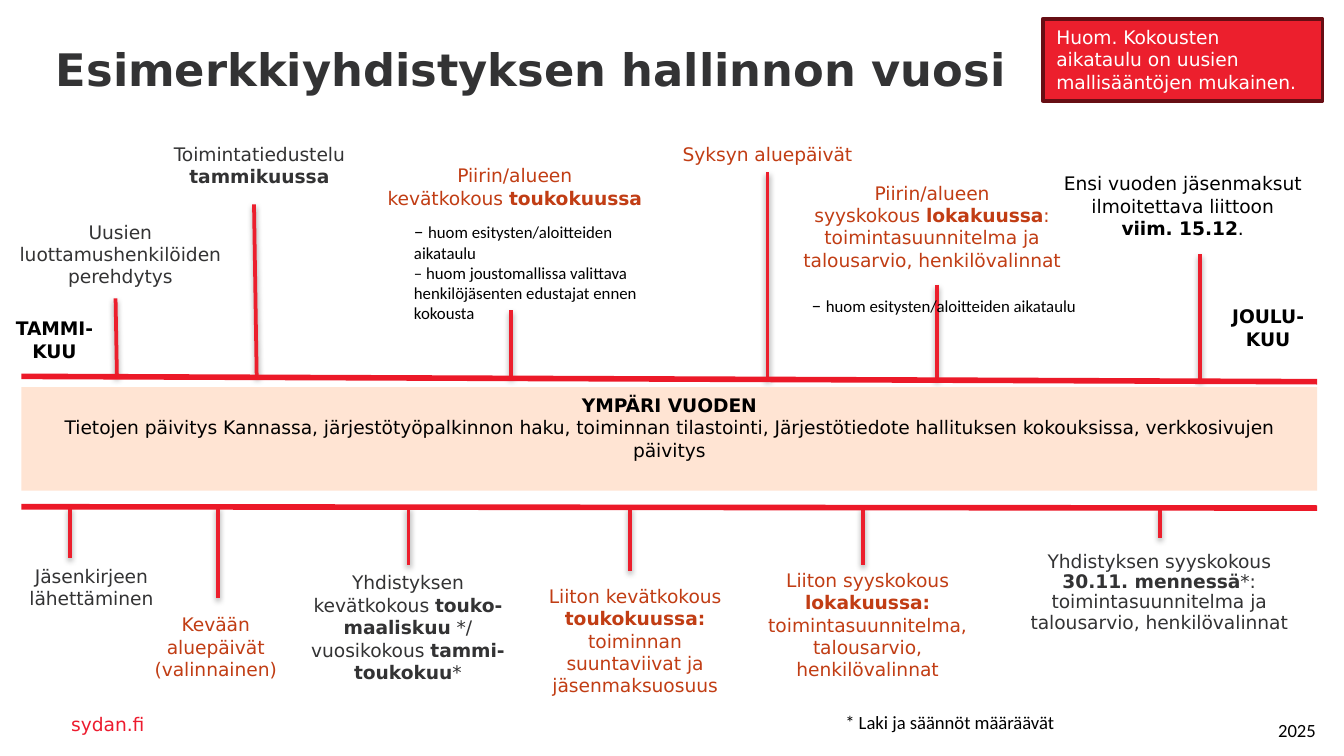
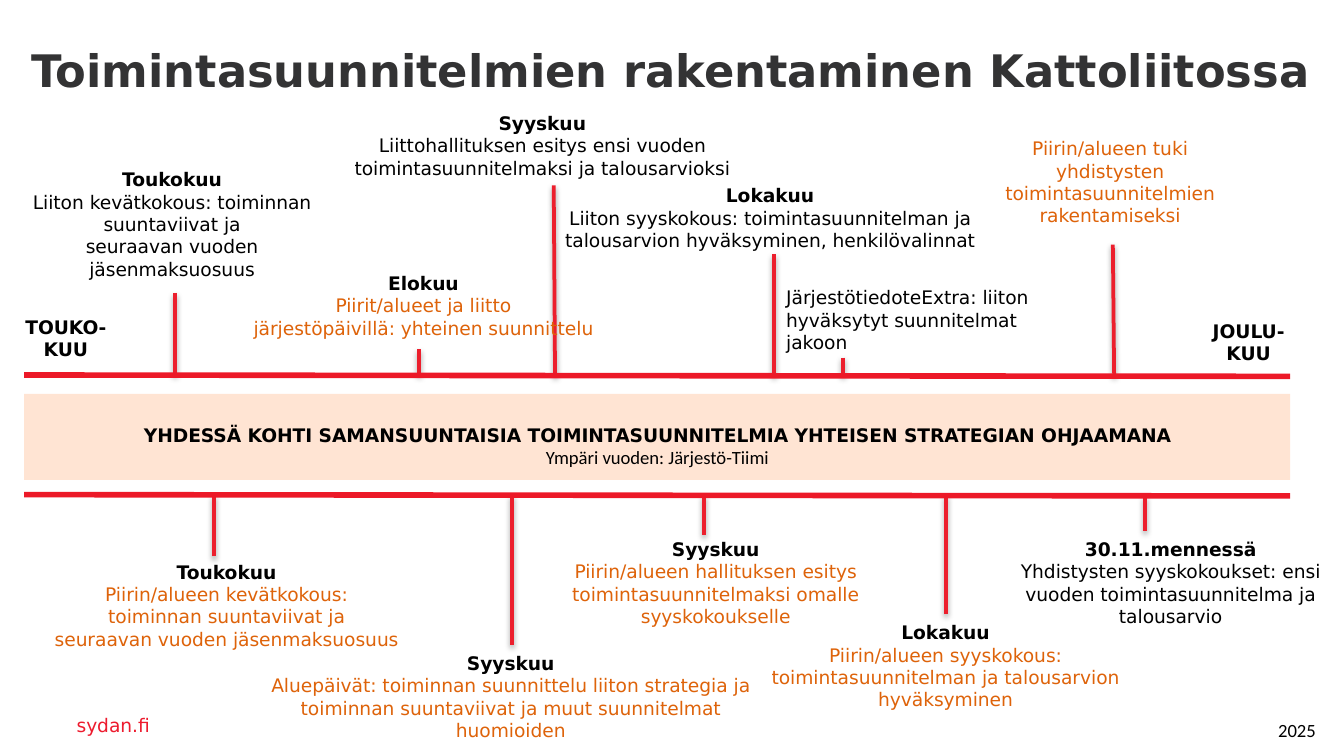
import pptx
import pptx.dml.color
import pptx.enum.shapes
import pptx.enum.text
import pptx.oxml
import pptx.oxml.ns
import pptx.util

ALIGN = pptx.enum.text.PP_ALIGN
ANCHOR = pptx.enum.text.MSO_ANCHOR


class Theme:
    wide, high = 10.01, 5.63
    columns = 100
    sans, plain = "DejaVu Sans", "Calibri"
    dark, black, white = "333334", "000000", "FFFFFF"
    red, axis_red, link_red, border_red = "EC1F2D", "EC1928", "ED1B2E", "670E14"
    rust, orange, peach = "C13D14", "DE630A", "FFE4D3"
    title_size, body_size, dash_size, note_size = 24, 10, 10.5, 9
    axis_width, stem_width = 3, 2

    # style name: font, size, colour, alignment
    styles = {
        "dark": (sans, body_size, dark, ALIGN.CENTER),
        "black": (sans, body_size, black, ALIGN.CENTER),
        "rust": (sans, body_size, rust, ALIGN.CENTER),
        "orange": (sans, body_size, orange, ALIGN.CENTER),
        "alert": (sans, body_size, white, ALIGN.LEFT),
        "link": (sans, body_size, link_red, ALIGN.LEFT),
        "title": (sans, title_size, dark, ALIGN.CENTER),
        "caption": (plain, body_size, black, ALIGN.CENTER),
        "footer": (plain, body_size, black, ALIGN.LEFT),
        "note": (plain, note_size, black, ALIGN.LEFT),
    }
    # what text between ** marks gets; bold unless named here
    emphasis = {"note": {"size": pptx.util.Pt(dash_size)}}

    shadow = (
        '<a:effectLst %s><a:outerShdw blurRad="39370" dist="20320" dir="5400000" rotWithShape="0">'
        '<a:srgbClr val="000000"><a:alpha val="38000"/></a:srgbClr>'
        "</a:outerShdw></a:effectLst>"
    )
    no_shadow = "<a:effectLst %s/>"


def assign(target, values):
    for name, value in values.items():
        setattr(target, name, value)


def rgb(value):
    return pptx.dml.color.RGBColor.from_string(value)


class Deck:
    """Draws on the current slide; every length counts square cells, 100 to the slide's width."""

    def __init__(self, theme):
        self.theme = theme
        self.presentation = pptx.Presentation()
        assign(self.presentation, {
            "slide_width": pptx.util.Inches(theme.wide),
            "slide_height": pptx.util.Inches(theme.high),
        })
        self.slide = None

    def cells(self, *counts):
        cell = self.presentation.slide_width / self.theme.columns
        return [int(count * cell) for count in counts]

    def new_slide(self, title, place, link_column, link_row):
        self.slide = self.presentation.slides.add_slide(self.presentation.slide_layouts[5])
        shape = self.slide.shapes.title
        assign(shape, dict(zip(("left", "top", "width", "height"), self.cells(*place))))
        self.fill_text(shape, "title", [f"**{title}**"], anchor=ANCHOR.MIDDLE, insets=(0.8, 0.4))
        self.text((link_column, link_row, 73.6, 3), "link", ["sydan.fi"], anchor=ANCHOR.MIDDLE)
        self.text((94.1, 53, 5.8, 2.7), "footer", ["2025"])

    def fill_text(self, shape, style, lines, heading=None, anchor=ANCHOR.TOP,
                  insets=(1, 0.5), **paragraph_format):
        """Write the lines below an optional bold black heading; ** marks emphasis."""
        side, top = self.cells(*insets)
        frame = shape.text_frame
        assign(frame, {
            "word_wrap": True, "auto_size": pptx.enum.text.MSO_AUTO_SIZE.NONE,
            "vertical_anchor": anchor, "margin_left": side, "margin_right": side,
            "margin_top": top, "margin_bottom": self.cells(0.4)[0],
        })
        content = [("black", f"**{heading}**")] if heading else []
        content += [(style, line) for line in lines]
        for index, (name, line) in enumerate(content):
            font, size, colour, alignment = self.theme.styles[name]
            paragraph = frame.add_paragraph() if index else frame.paragraphs[0]
            assign(paragraph, {"alignment": alignment, **paragraph_format})
            for part, words in enumerate(line.split("**")):
                if not words:
                    continue
                run = paragraph.add_run()
                run.text = words
                values = {"name": font, "size": pptx.util.Pt(size), "bold": False}
                if part % 2:
                    values.update(self.theme.emphasis.get(name, {"bold": True}))
                assign(run.font, values)
                run.font.color.rgb = rgb(colour)

    def text(self, place, style, lines, **options):
        box = self.slide.shapes.add_textbox(*self.cells(*place))
        self.fill_text(box, style, lines, **options)

    def panel(self, place, fill, style, lines, border=None, **options):
        shape = self.slide.shapes.add_shape(
            pptx.enum.shapes.MSO_SHAPE.RECTANGLE, *self.cells(*place))
        shape.shadow.inherit = False
        shape.fill.solid()
        shape.fill.fore_color.rgb = rgb(fill)
        if border:
            shape.line.color.rgb = rgb(border)
            shape.line.width = pptx.util.Pt(self.theme.stem_width)
        else:
            shape.line.fill.background()
        self.fill_text(shape, style, lines, **options)

    def line(self, ends, colour, width, effect):
        connector = self.slide.shapes.add_connector(
            pptx.enum.shapes.MSO_CONNECTOR.STRAIGHT, *self.cells(*ends))
        connector.line.color.rgb = rgb(colour)
        connector.line.width = pptx.util.Pt(width)
        connector._element.spPr.append(
            pptx.oxml.parse_xml(effect % pptx.oxml.ns.nsdecls("a")))

    def axis(self, columns, rows, stems):
        """Draw an axis and its stems, each a column, an end row and the lean at the axis."""
        theme = self.theme
        (left, right), (first, last) = columns, rows
        for column, end, lean in stems:
            start = first + (last - first) * (column - left) / (right - left)
            self.line((column, end, column + lean, start),
                      theme.red, theme.stem_width, theme.shadow)
        self.line((left, first, right, last), theme.axis_red, theme.axis_width, theme.no_shadow)


def administration_year(deck):
    theme = deck.theme
    deck.new_slide("Esimerkkiyhdistyksen hallinnon vuosi", (2.8, 2.6, 73.4, 5), 4.3, 52.3)
    span = (1.6, 98)
    deck.axis(span, (28, 28.4), [
        (8.6, 22.2, 0.1), (18.9, 15.2, 0.2), (38, 23.1, 0),
        (57.1, 12.8, 0), (69.7, 21.2, 0), (89.3, 18.9, 0)])
    deck.axis(span, (37.7, 37.8), [
        (5.2, 41.5, 0), (16.2, 44.5, 0), (30.4, 42, 0),
        (46.9, 42.5, 0), (64.2, 42, 0), (86.3, 40, 0)])
    deck.panel((1.6, 28.8, 96.4, 7.7), theme.peach, "black", [
        "Tietojen päivitys Kannassa, järjestötyöpalkinnon haku, toiminnan tilastointi, "
        "Järjestötiedote hallituksen kokouksissa, verkkosivujen päivitys",
    ], heading="YMPÄRI VUODEN")
    deck.panel((77.6, 1.4, 20.8, 6.1), theme.red, "alert",
               ["Huom. Kokousten aikataulu on uusien mallisääntöjen mukainen."],
               border=theme.border_red)

    for place, style, lines in [
        ((-0.7, 23.1, 9.5, 4.4), "black", ["**TAMMI-**", "**KUU**"]),
        ((90.2, 22.2, 8.3, 4.4), "black", ["**JOULU-**", "**KUU**"]),
        ((-0.1, 15.9, 18.1, 6.1), "dark", ["Uusien luottamushenkilöiden perehdytys"]),
        ((6.8, 10.1, 25, 4.4), "dark", ["Toimintatiedustelu", "**tammikuussa**"]),
        ((26.5, 11.7, 23.6, 4.5), "rust", ["Piirin/alueen", "kevätkokous **toukokuussa**"]),
        ((49.2, 10.1, 15.8, 2.8), "rust", ["Syksyn aluepäivät"]),
        ((58.2, 13, 22.3, 7.7), "rust", [
            "Piirin/alueen", "syyskokous **lokakuussa**:",
            "toimintasuunnitelma ja talousarvio, henkilövalinnat"]),
        ((76.2, 12.3, 23.6, 6.1), "black", [
            "Ensi vuoden jäsenmaksut ilmoitettava liittoon", "**viim. 15.12**."]),
        ((29.8, 15.8, 19.7, 8.8), "note", [
            "**– **huom esitysten/aloitteiden aikataulu",
            "– huom joustomallissa valittava henkilöjäsenten edustajat ennen kokousta"]),
        ((59.4, 21.3, 25.7, 2.8), "note", ["**– **huom esitysten/aloitteiden aikataulu"]),
        ((0.2, 41.5, 13.2, 4.4), "dark", ["Jäsenkirjeen lähettäminen"]),
        ((8.9, 45.1, 14.3, 6.1), "rust", ["Kevään", "aluepäivät (valinnainen)"]),
        ((21.6, 42, 17.5, 9.4), "dark", [
            "Yhdistyksen kevätkokous **touko-maaliskuu** */ vuosikokous **tammi-toukokuu***"]),
        ((38.3, 43, 17.9, 9.4), "rust", [
            "Liiton kevätkokous **toukokuussa:**", "toiminnan suuntaviivat ja jäsenmaksuosuus"]),
        ((55.1, 41.8, 18.9, 9.4), "rust", [
            "Liiton syyskokous",
            "**lokakuussa:** toimintasuunnitelma, talousarvio, henkilövalinnat"]),
        ((61.9, 52.4, 24.4, 2.7), "footer", ["* Laki ja säännöt määräävät"]),
    ]:
        deck.text(place, style, lines)
    deck.text((75.6, 40.7, 21.3, 8.3), "dark", [
        "Yhdistyksen syyskokous",
        "**30.11. mennessä***: toimintasuunnitelma ja talousarvio, henkilövalinnat",
    ], insets=(0.8, 0.4), line_spacing=0.9)


def action_plans(deck):
    deck.new_slide("Toimintasuunnitelmien rakentaminen Kattoliitossa",
                   (0, 2.7, 99.8, 5), 4.7, 52.4)
    span = (1.8, 96)
    deck.axis(span, (27.9, 28), [
        (13, 21.8, 0), (31.2, 26, 0), (41.2, 13.8, 0.1),
        (57.6, 18.9, 0), (62.7, 26.6, 0), (82.8, 18.2, 0.1)])
    deck.axis(span, (36.8, 36.9), [
        (15.9, 41.4, 0), (38.1, 48, 0), (52.4, 39.8, 0), (70.4, 45.7, 0), (85.2, 39.5, 0)])
    deck.panel((1.8, 29.3, 94.2, 6.4), deck.theme.peach, "caption",
               ["Ympäri vuoden: Järjestö-Tiimi"], insets=(1, 2.2),
               heading="YHDESSÄ KOHTI SAMANSUUNTAISIA TOIMINTASUUNNITELMIA "
                       "YHTEISEN STRATEGIAN OHJAAMANA")

    for place, heading, style, lines in [
        ((-0.8, 12, 27.2, 9.4), "Toukokuu", "black", [
            "Liiton kevätkokous: toiminnan suuntaviivat ja",
            "seuraavan vuoden jäsenmaksuosuus"]),
        ((14, 19.7, 35, 6.1), "Elokuu", "orange", [
            "Piirit/alueet ja liitto", "järjestöpäivillä: yhteinen suunnittelu"]),
        ((24.3, 7.8, 32.1, 6.1), "Syyskuu", "black", [
            "Liittohallituksen esitys ensi vuoden toimintasuunnitelmaksi ja talousarvioksi"]),
        ((39.9, 13.2, 34.8, 6.1), "Lokakuu", "black", [
            "Liiton syyskokous: toimintasuunnitelman ja talousarvion hyväksyminen, "
            "henkilövalinnat"]),
        ((73.2, 9.7, 18.8, 7.7), None, "orange", [
            "Piirin/alueen tuki yhdistysten toimintasuunnitelmien rakentamiseksi"]),
        ((0, 23, 9.8, 4.5), None, "black", ["**TOUKO-**", "**KUU**"]),
        ((88.3, 23.3, 9.2, 4.5), None, "black", ["**JOULU-**", "**KUU**"]),
        ((1.8, 41.2, 30.1, 7.7), "Toukokuu", "orange", [
            "Piirin/alueen kevätkokous:", "toiminnan suuntaviivat ja",
            "seuraavan vuoden jäsenmaksuosuus"]),
        ((18.7, 48, 38.6, 7.7), "Syyskuu", "orange", [
            "Aluepäivät: toiminnan suunnittelu liiton strategia ja "
            "toiminnan suuntaviivat ja muut suunnitelmat huomioiden"]),
        ((37.1, 39.5, 32.3, 7.7), "Syyskuu", "orange", [
            "Piirin/alueen hallituksen esitys toimintasuunnitelmaksi omalle syyskokoukselle"]),
        ((55.3, 45.7, 30.1, 7.7), "Lokakuu", "orange", [
            "Piirin/alueen syyskokous: toimintasuunnitelman ja talousarvion hyväksyminen"]),
        ((74.6, 39.5, 25, 7.7), "30.11.mennessä", "black", [
            "Yhdistysten syyskokoukset: ensi vuoden toimintasuunnitelma ja talousarvio"]),
    ]:
        deck.text(place, style, lines, heading=heading)
    deck.text((57.5, 20.8, 22.9, 6.1), "black",
              ["JärjestötiedoteExtra: liiton hyväksytyt suunnitelmat jakoon"],
              alignment=ALIGN.LEFT)


def main():
    deck = Deck(Theme())
    administration_year(deck)
    action_plans(deck)
    deck.presentation.save("out.pptx")


if __name__ == "__main__":
    main()
